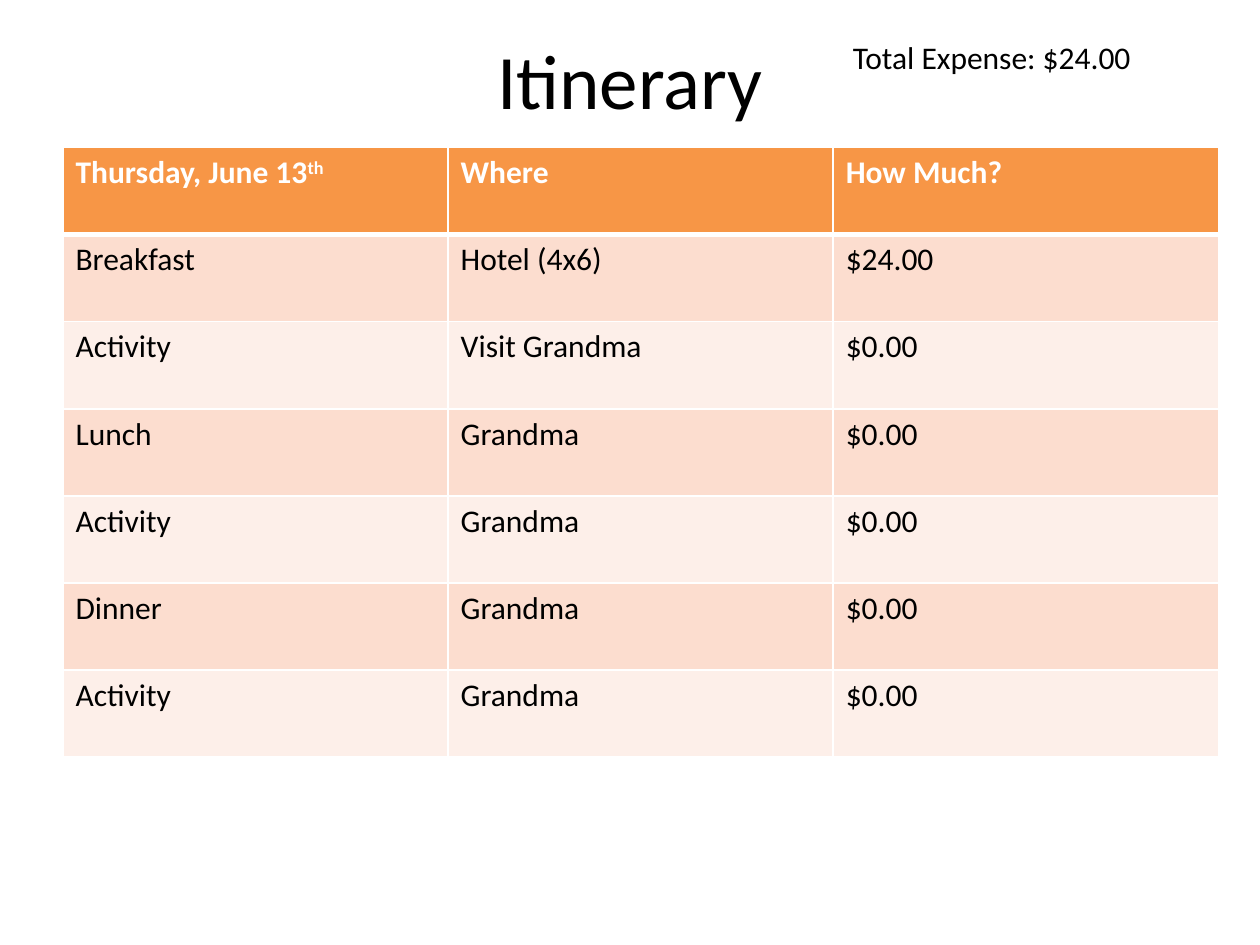
from dataclasses import dataclass

from lxml import etree
from pptx import Presentation
from pptx.dml.color import RGBColor
from pptx.enum import text
from pptx.oxml import ns
from pptx.util import Inches, Pt

COLORS = {
    "text": "000000",
    "white": "FFFFFF",
    "header": "F79646",
    "odd": "FCDDCF",
    "even": "FDEFE9",
}
FONT = "Calibri"


@dataclass
class Run:
    content: str
    size: float = 18
    color: str = "text"
    bold: bool = False
    superscript: bool = False


@dataclass
class Label:
    left: float
    top: float
    width: float
    height: float
    run: Run
    align: text.PP_ALIGN = text.PP_ALIGN.LEFT
    anchor: text.MSO_ANCHOR = text.MSO_ANCHOR.TOP


LABELS = [
    Label(0.5, 0, 9, 1.25, Run("Itinerary", size=44),
          text.PP_ALIGN.CENTER, text.MSO_ANCHOR.MIDDLE),
    Label(6.67, 0.25, 3.08, 0.4, Run("Total Expense: $24.00")),
]
HEADER = [["Thursday, June 13", "th"], ["Where"], ["How Much?"]]
ITINERARY = [
    ("Breakfast", "Hotel (4x6)", "$24.00"),
    ("Activity", "Visit Grandma", "$0.00"),
    ("Lunch", "Grandma", "$0.00"),
    ("Activity", "Grandma", "$0.00"),
    ("Dinner", "Grandma", "$0.00"),
    ("Activity", "Grandma", "$0.00"),
]


def color(name: str) -> RGBColor:
    return RGBColor.from_string(COLORS[name])


def add_run(paragraph, run: Run) -> None:
    text_run = paragraph.add_run()
    text_run.text = run.content
    font = text_run.font
    font.name = FONT
    font.size = Pt(run.size)
    font.bold = run.bold
    font.color.rgb = color(run.color)
    if run.superscript:
        text_run._r.get_or_add_rPr().set("baseline", "30000")


def add_label(slide, label: Label) -> None:
    shape = slide.shapes.add_textbox(
        Inches(label.left), Inches(label.top), Inches(label.width), Inches(label.height)
    )
    frame = shape.text_frame
    frame.word_wrap = True
    frame.vertical_anchor = label.anchor
    paragraph = frame.paragraphs[0]
    paragraph.alignment = label.align
    add_run(paragraph, label.run)


def set_borders(cell, top: float, bottom: float) -> None:
    properties = cell._tc.get_or_add_tcPr()
    for side, width in (("L", 1), ("R", 1), ("T", top), ("B", bottom)):
        line = etree.SubElement(properties, ns.qn(f"a:ln{side}"), w=str(Pt(width)))
        fill = etree.SubElement(line, ns.qn("a:solidFill"))
        etree.SubElement(fill, ns.qn("a:srgbClr"), val=COLORS["white"])


def fill_cell(cell, runs: list[Run], fill: str, top: float, bottom: float) -> None:
    set_borders(cell, top, bottom)
    cell.fill.solid()
    cell.fill.fore_color.rgb = color(fill)
    for run in runs:
        add_run(cell.text_frame.paragraphs[0], run)


def add_itinerary(slide) -> None:
    table = slide.shapes.add_table(
        len(ITINERARY) + 1, len(HEADER),
        Inches(0.5), Inches(1.17), Inches(9.17), Inches(4.84),
    ).table
    for column, parts in enumerate(HEADER):
        runs = [
            Run(part, color="white", bold=True, superscript=index > 0)
            for index, part in enumerate(parts)
        ]
        fill_cell(table.cell(0, column), runs, "header", top=1, bottom=3)
    for row, entries in enumerate(ITINERARY, start=1):
        fill = "odd" if row % 2 else "even"
        for column, entry in enumerate(entries):
            fill_cell(table.cell(row, column), [Run(entry)], fill,
                      top=3 if row == 1 else 1, bottom=1)


def main() -> None:
    presentation = Presentation()
    presentation.slide_width = Inches(10)
    presentation.slide_height = Inches(7.5)
    slide = presentation.slides.add_slide(presentation.slide_layouts[6])
    for label in LABELS:
        add_label(slide, label)
    add_itinerary(slide)
    presentation.save("out.pptx")


if __name__ == "__main__":
    main()
